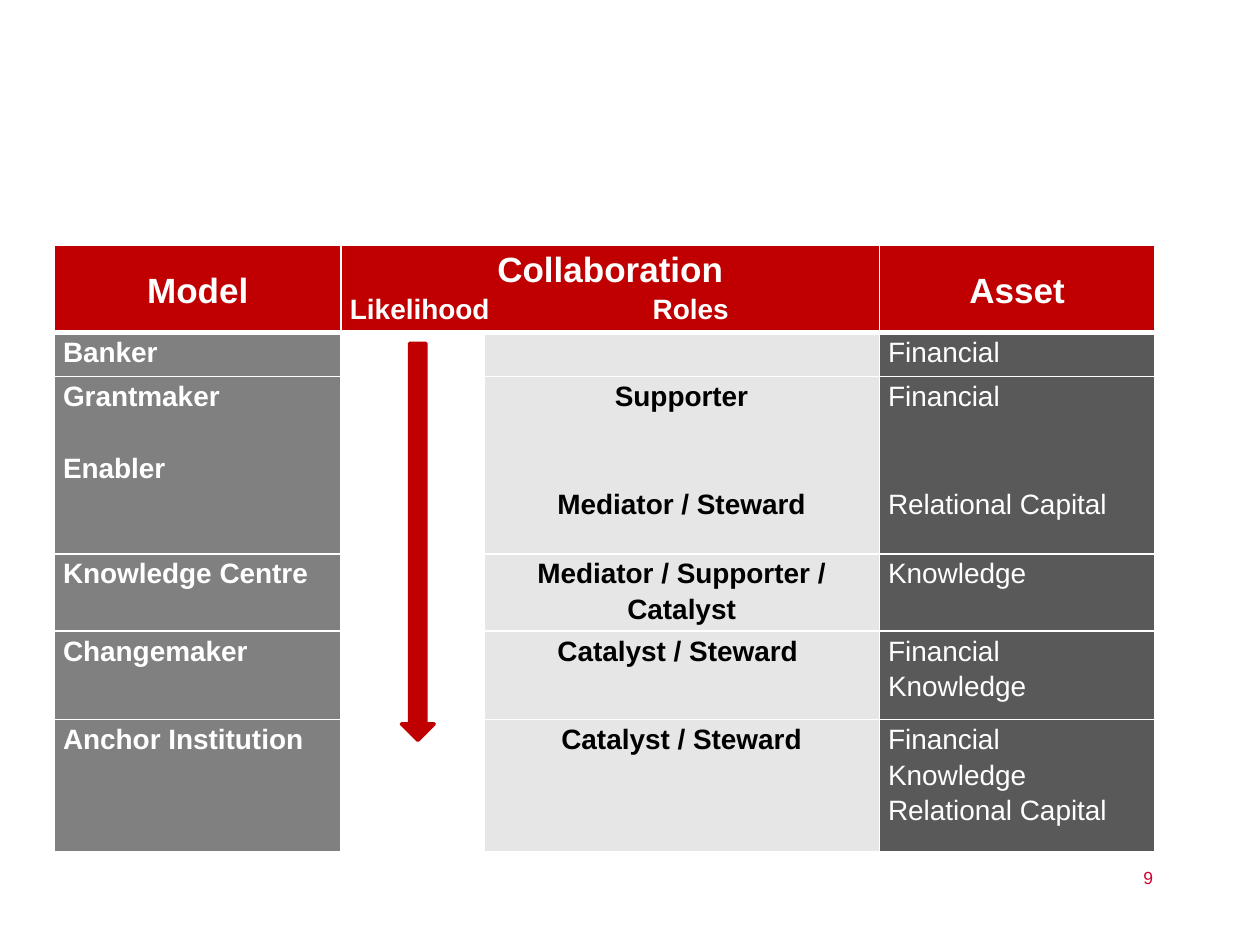
from lxml import etree
from pptx import Presentation, util as u
from pptx.dml.color import RGBColor
from pptx.enum import shapes, text
from pptx.oxml.ns import qn

Pt = u.Pt
LEFT, CENTER, RIGHT, JUSTIFY = (text.PP_ALIGN.LEFT, text.PP_ALIGN.CENTER,
                                text.PP_ALIGN.RIGHT, text.PP_ALIGN.JUSTIFY)


class Theme:
    font = "Arial"
    red, number = "C00000", "D00030"
    white, black = "FFFFFF", "000000"
    model, roles, asset = "808080", "E6E6E6", "595959"
    heading, body, small = 20, 16, 10
    spacing = 1.15
    line = 20.6  # height of one body line


COLUMNS = [164, 81.5, 226, 157.5]
ROWS = [50, 25.2, 101.4, 41, 50.4, 75.6]
ROLES_TAB = 173

# Each entry is a list of (wording, blank lines above it)
MODELS = [
    ([("Banker", 0)], [], [("Financial", 0)]),
    ([("Grantmaker", 0), ("Enabler", 1)],
     [("Supporter", 0), ("Mediator / Steward", 2)],
     [("Financial", 0), ("Relational Capital", 2)]),
    ([("Knowledge Centre", 0)], [("Mediator / Supporter / Catalyst", 0)],
     [("Knowledge", 0)]),
    ([("Changemaker", 0)], [("Catalyst / Steward ", 0)],
     [("Financial", 0), ("Knowledge", 0)]),
    ([("Anchor Institution", 0)], [("Catalyst / Steward", 0)],
     [("Financial", 0), ("Knowledge", 0), ("Relational Capital", 0)]),
]


def apply(target, **values):
    for name, value in values.items():
        setattr(target, name, value)


def write(paragraph, wording, size, color, align, bold=False, **layout):
    apply(paragraph, alignment=align, **layout)
    run = paragraph.add_run()
    run.text = wording
    apply(run.font, name=Theme.font, size=Pt(size), bold=bold)
    run.font.color.rgb = RGBColor.from_string(color)


def set_borders(cell, bottom=1):
    props = cell._tc.get_or_add_tcPr()
    widths = {"a:lnL": 1, "a:lnR": 1, "a:lnT": 1, "a:lnB": bottom}
    for index, (side, width) in enumerate(widths.items()):
        border = etree.Element(qn(side), w=str(Pt(width)))
        fill = etree.SubElement(border, qn("a:solidFill"))
        etree.SubElement(fill, qn("a:srgbClr"), val=Theme.white)
        props.insert(index, border)


def style_cell(cell, fill=None, bottom=1):
    apply(cell, margin_left=Pt(5), margin_right=Pt(5), margin_top=0, margin_bottom=0)
    if fill:
        cell.fill.solid()
        cell.fill.fore_color.rgb = RGBColor.from_string(fill)
    else:
        cell.fill.background()
    set_borders(cell, bottom)


def fill_header(table):
    table.cell(0, 1).merge(table.cell(0, 2))
    for cell in table.rows[0].cells:
        style_cell(cell, Theme.red, bottom=3)
    heading = dict(size=Theme.heading, color=Theme.white, align=CENTER,
                   bold=True, line_spacing=Theme.spacing)
    for column, title in ((0, "Model"), (1, "Collaboration"), (3, "Asset")):
        cell = table.cell(0, column)
        write(cell.text_frame.paragraphs[0], title, **heading)
        if column != 1:
            cell.vertical_anchor = text.MSO_ANCHOR.MIDDLE

    # Two sub-headings share one line, parted by a tab stop
    subheads = table.cell(0, 1).text_frame.add_paragraph()
    tabs = etree.SubElement(subheads._p.get_or_add_pPr(), qn("a:tabLst"))
    etree.SubElement(tabs, qn("a:tab"), pos=str(Pt(ROLES_TAB)), algn="l")
    write(subheads, "Likelihood\tRoles", **{**heading, "size": Theme.body, "align": LEFT})


def fill_models(table):
    styles = {0: (Theme.model, Theme.white, JUSTIFY, True),
              2: (Theme.roles, Theme.black, CENTER, True),
              3: (Theme.asset, Theme.white, JUSTIFY, False)}
    for row, entries in enumerate(MODELS, start=1):
        style_cell(table.cell(row, 1))
        for (column, (fill, color, align, bold)), lines in zip(styles.items(), entries):
            cell = table.cell(row, column)
            style_cell(cell, fill)
            frame = cell.text_frame
            for index, (wording, gap) in enumerate(lines):
                paragraph = frame.add_paragraph() if index else frame.paragraphs[0]
                layout = {"line_spacing": Theme.spacing}
                if gap:
                    layout["space_before"] = Pt(gap * Theme.line)
                write(paragraph, wording, Theme.body, color, align, bold, **layout)
    table.cell(1, 1).merge(table.cell(len(MODELS), 1))


def add_model_table(slide, left, top):
    table = slide.shapes.add_table(len(ROWS), len(COLUMNS), Pt(left), Pt(top),
                                   Pt(sum(COLUMNS)), Pt(sum(ROWS))).table
    apply(table, first_row=False, horz_banding=False)
    for column, width in zip(table.columns, COLUMNS):
        column.width = Pt(width)
    for row, height in zip(table.rows, ROWS):
        row.height = Pt(height)
    fill_header(table)
    fill_models(table)


def add_likelihood_arrow(slide, left, top, width, height):
    # A right arrow turned to point down inside the given box
    center_x, center_y = left + width / 2, top + height / 2
    arrow = slide.shapes.add_shape(
        shapes.MSO_SHAPE.RIGHT_ARROW, Pt(center_x - height / 2),
        Pt(center_y - width / 2), Pt(height), Pt(width))
    apply(arrow, rotation=90)
    arrow.shadow.inherit = False
    arrow.fill.solid()
    for color in (arrow.fill.fore_color, arrow.line.color):
        color.rgb = RGBColor.from_string(Theme.red)
    arrow.line.width = Pt(2)


def add_page_number(slide, left, top, width, height):
    frame = slide.shapes.add_textbox(Pt(left), Pt(top), Pt(width), Pt(height)).text_frame
    frame.word_wrap = True
    write(frame.paragraphs[0], "9", Theme.small, Theme.number, RIGHT)


def main():
    deck = Presentation()
    apply(deck, slide_width=Pt(720), slide_height=Pt(540))
    slide = deck.slides.add_slide(deck.slide_layouts[6])
    add_page_number(slide, 516, 492, 150, 36)
    add_model_table(slide, 31, 140)
    add_likelihood_arrow(slide, 229.4, 196.2, 18.7, 226.8)
    deck.save("out.pptx")


if __name__ == "__main__":
    main()
